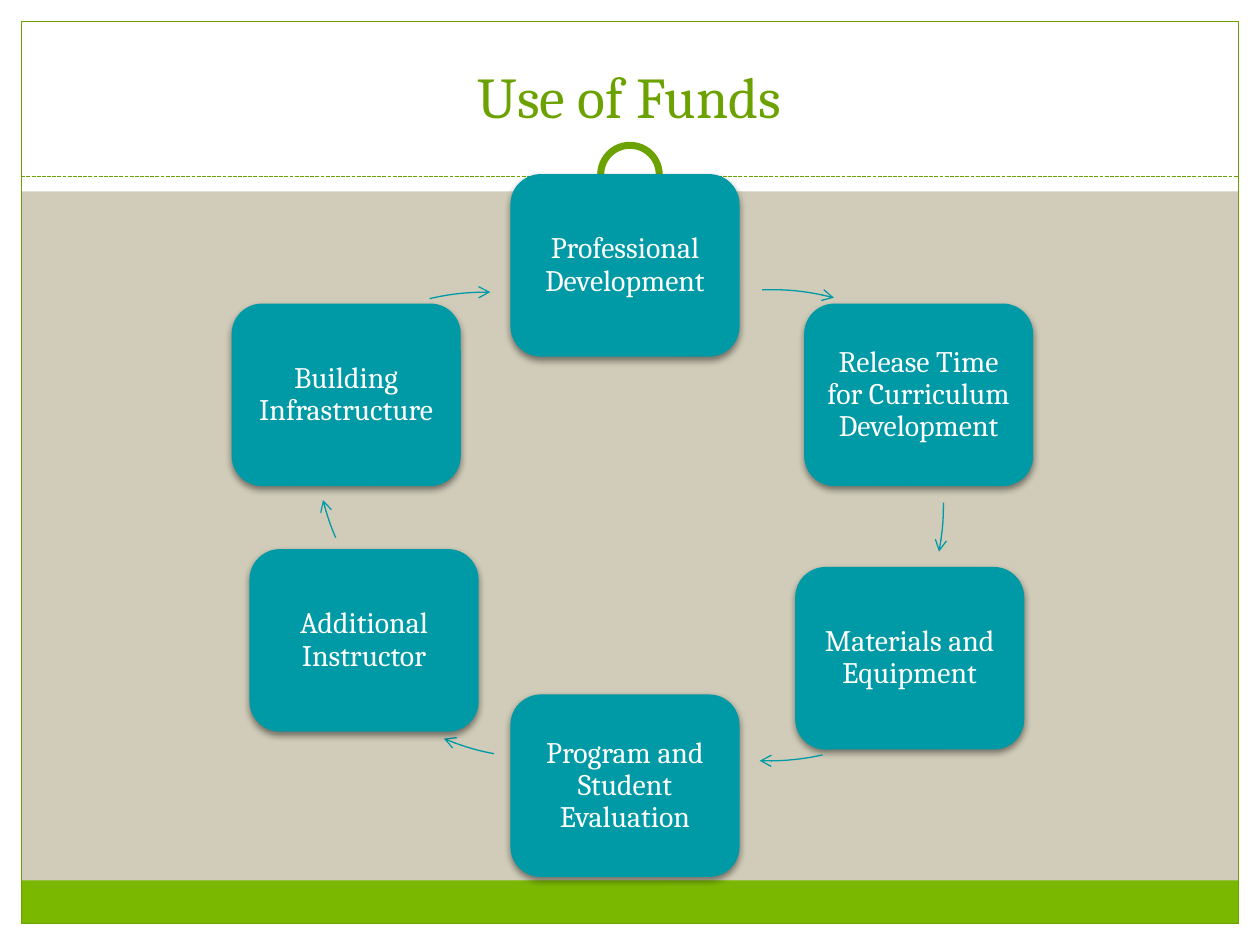
from typing import NamedTuple, Optional

from lxml import etree
from pptx import Presentation
from pptx.dml.color import RGBColor
from pptx.enum.dml import MSO_LINE
from pptx.enum.shapes import MSO_CONNECTOR, MSO_SHAPE
from pptx.enum.text import MSO_ANCHOR, MSO_AUTO_SIZE, PP_ALIGN
from pptx.oxml import parse_xml
from pptx.oxml.ns import nsdecls, qn
from pptx.util import Cm, Pt

RECT, OVAL = MSO_SHAPE.RECTANGLE, MSO_SHAPE.OVAL
ROUNDED, ARC = MSO_SHAPE.ROUNDED_RECTANGLE, MSO_SHAPE.ARC
STRAIGHT, DASH = MSO_CONNECTOR.STRAIGHT, MSO_LINE.SQUARE_DOT
CENTER, MIDDLE, BOTTOM = PP_ALIGN.CENTER, MSO_ANCHOR.MIDDLE, MSO_ANCHOR.BOTTOM
NO_AUTOFIT = MSO_AUTO_SIZE.NONE

COLORS = {
    "backdrop": "D0CCB9",
    "white": "FFFFFF",
    "footer": "7AB800",
    "green": "6CA200",
    "teal": "009AA6",
}
FONT = "Cambria"
TITLE_ONLY = 5
SLIDE_W, SLIDE_H = 25.4, 19.05
MARGIN = 0.43
INNER_W = SLIDE_W - 2 * MARGIN
RULE_Y = 3.56
CARD_W, CARD_H = 4.62, 3.68
ARC_SIZE = 10.46
ARC_UNITS_PER_DEGREE = 0.6  # 60000 per degree, in adjustment units of 100000
CARD_SHADOW = (
    f'<a:outerShdw {nsdecls("a")} blurRad="{Pt(4)}" dist="{Pt(2)}" dir="5400000" '
    'rotWithShape="0"><a:srgbClr val="000000"><a:alpha val="45000"/></a:srgbClr>'
    "</a:outerShdw>"
)


class Panel(NamedTuple):
    left: float
    top: float
    width: float
    height: float
    fill: Optional[str] = None
    line: Optional[str] = None
    line_pt: float = 0.75
    kind: int = RECT


class Step(NamedTuple):
    """A card and the clockwise arc that leads on to the next card."""
    label: str
    left: float
    top: float
    arc_left: float
    arc_top: float
    start_deg: float
    end_deg: float


FRAME = [
    Panel(0, SLIDE_H - MARGIN, SLIDE_W, MARGIN, "white"),
    Panel(0, 0, SLIDE_W, 3.86, "white"),
    Panel(0, 0, MARGIN, SLIDE_H, "white"),
    Panel(SLIDE_W - MARGIN, 0, MARGIN, SLIDE_H, "white"),
    Panel(MARGIN, 17.75, INNER_W, 0.87, "footer"),
    Panel(MARGIN, MARGIN, INNER_W, SLIDE_H - 2 * MARGIN, line="green"),
]
RING = [
    Panel(11.85, 2.67, 1.7, 1.7, "white", kind=OVAL),
    Panel(12.11, 2.93, 1.18, 1.18, "white", "green", 4, OVAL),
]
STEPS = [
    Step("Professional Development", 10.29, 3.51, 10.29, 5.84, 268.3, 284.3),
    Step("Release Time for Curriculum Development",
         16.21, 6.12, 8.56, 4.93, 359.7, 10.6),
    Step("Materials and Equipment", 16.03, 11.43, 10.24, 4.88, 77.7, 91.7),
    Step("Program and Student Evaluation", 10.29, 14, 5.72, 4.83, 100.9, 112.5),
    Step("Additional Instructor", 5.03, 11.07, 6.35, 3.56, 156.9, 165.7),
    Step("Building Infrastructure", 4.67, 6.12, 4.6, 5.89, 257.1, 270.6),
]


def rgb(name: str) -> RGBColor:
    return RGBColor.from_string(COLORS[name])


def apply(target, values: dict) -> None:
    for attribute, value in values.items():
        setattr(target, attribute, value)


def draw_panel(slide, panel: Panel):
    box = (Cm(length) for length in panel[:4])
    shape = slide.shapes.add_shape(panel.kind, *box)
    shape.shadow.inherit = False
    if panel.fill:
        shape.fill.solid()
        shape.fill.fore_color.rgb = rgb(panel.fill)
    else:
        shape.fill.background()
    if panel.line:
        shape.line.color.rgb = rgb(panel.line)
        shape.line.width = Pt(panel.line_pt)
    else:
        shape.line.fill.background()
    return shape


def draw_rule(slide) -> None:
    rule = slide.shapes.add_connector(
        STRAIGHT, Cm(MARGIN), Cm(RULE_Y), Cm(MARGIN + INNER_W), Cm(RULE_Y))
    rule.line.color.rgb = rgb("green")
    apply(rule.line, {"width": Pt(0.75), "dash_style": DASH})
    etree.SubElement(rule._element.spPr, qn("a:effectLst"))


def write_text(shape, text: str, size: float, color: str, anchor, margin: float,
               spacing: float) -> None:
    frame = shape.text_frame
    frame.text = text
    inset = Cm(margin)
    apply(frame, {
        "word_wrap": True, "auto_size": NO_AUTOFIT, "vertical_anchor": anchor,
        "margin_left": inset, "margin_right": inset,
        "margin_top": inset, "margin_bottom": inset,
    })
    paragraph = frame.paragraphs[0]
    apply(paragraph, {"alignment": CENTER, "line_spacing": spacing})
    font = paragraph.runs[0].font
    apply(font, {"name": FONT, "size": Pt(size)})
    font.color.rgb = rgb(color)


def draw_title(slide, text: str) -> None:
    title = slide.shapes.title
    apply(title, {"left": Cm(0.84), "top": Cm(0.64),
                  "width": Cm(23.7), "height": Cm(2.11)})
    write_text(title, text, 33, "green", BOTTOM, 0.13, 1.0)
    # Bring the title in front of the white header band.
    slide.shapes._spTree.append(title._element)


def draw_card(slide, step: Step) -> None:
    card = draw_panel(
        slide, Panel(step.left, step.top, CARD_W, CARD_H, "teal", kind=ROUNDED))
    card._element.spPr.find(qn("a:effectLst")).append(parse_xml(CARD_SHADOW))
    write_text(card, step.label, 17, "white", MIDDLE, 0.18, 0.9)


def draw_arc_arrow(slide, step: Step) -> None:
    arc = draw_panel(slide, Panel(step.arc_left, step.arc_top, ARC_SIZE, ARC_SIZE,
                                  line="teal", kind=ARC))
    for index, degrees in enumerate((step.start_deg, step.end_deg)):
        arc.adjustments[index] = degrees * ARC_UNITS_PER_DEGREE
    etree.SubElement(arc.line._get_or_add_ln(), qn("a:tailEnd"), type="arrow")


def main() -> None:
    deck = Presentation()
    apply(deck, {"slide_width": Cm(SLIDE_W), "slide_height": Cm(SLIDE_H)})
    slide = deck.slides.add_slide(deck.slide_layouts[TITLE_ONLY])
    slide.background.fill.solid()
    slide.background.fill.fore_color.rgb = rgb("backdrop")

    for panel in FRAME:
        draw_panel(slide, panel)
    draw_rule(slide)
    for panel in RING:
        draw_panel(slide, panel)
    draw_title(slide, "Use of Funds")
    for step in STEPS:
        draw_card(slide, step)
        draw_arc_arrow(slide, step)
    deck.save("out.pptx")


if __name__ == "__main__":
    main()
